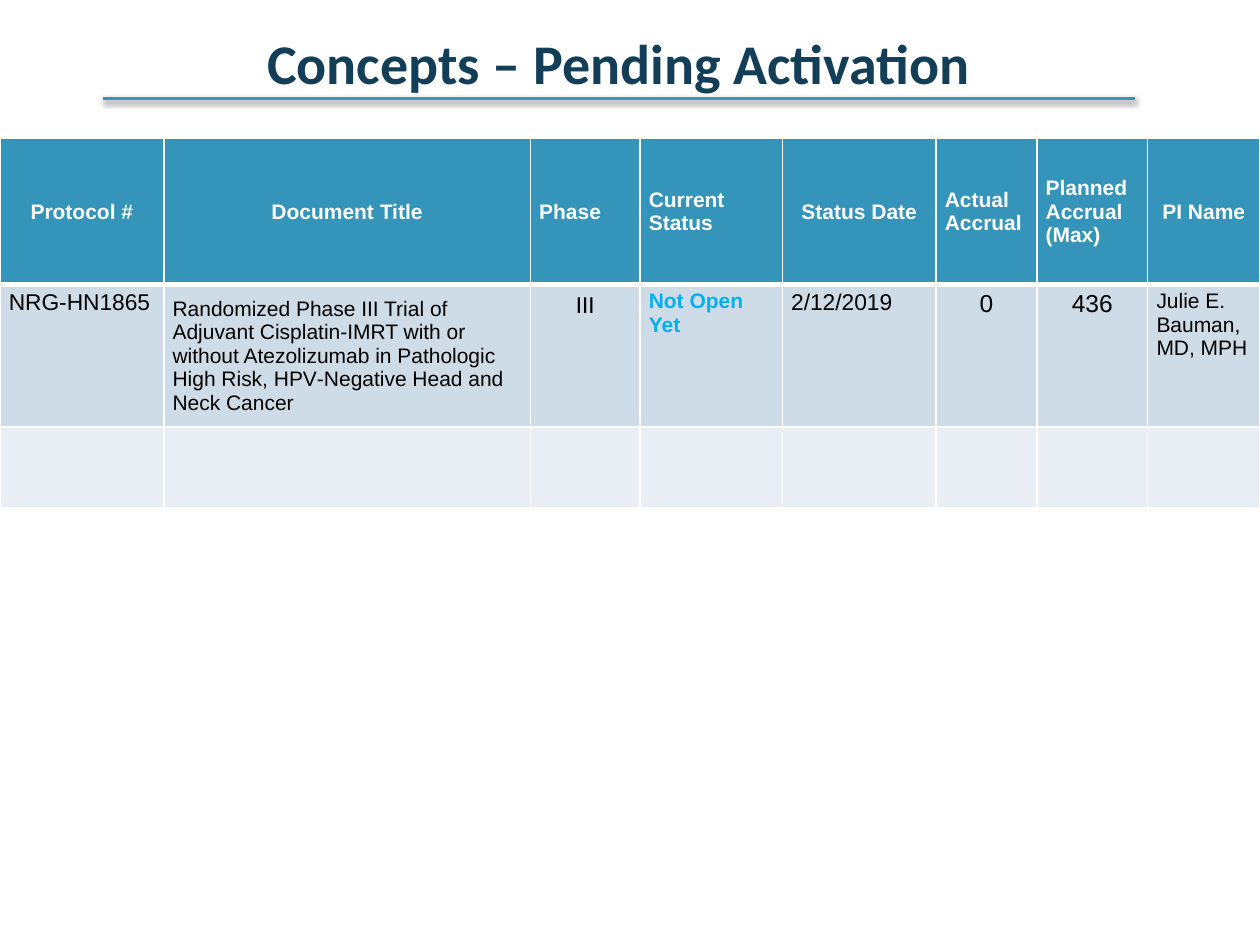
from dataclasses import dataclass

from lxml.etree import SubElement as Sub
from pptx import Presentation
from pptx.dml.color import RGBColor as Rgb
from pptx.enum.shapes import MSO_CONNECTOR as Conn
from pptx.enum.text import MSO_ANCHOR as Anchor, MSO_AUTO_SIZE as Fit, PP_ALIGN as Align
from pptx.oxml import parse_xml
from pptx.oxml.ns import nsdecls, qn
from pptx.util import Inches, Pt


@dataclass(frozen=True)
class Theme:
    navy: str = "123E57"
    teal: str = "3494BA"
    sky: str = "00B0F0"
    black: str = "000000"
    white: str = "FFFFFF"
    band: str = "CEDCE7"
    pale: str = "E8EEF3"
    sans: str = "Arial"
    head: str = "Calibri"
    title: int = 32
    small: int = 12
    mid: int = 13
    big: int = 14


T = Theme()
LEFT, MID = Align.LEFT, Align.CENTER
COLS = [1.3, 2.91, 0.87, 1.13, 1.22, 0.8, 0.88, 0.89]
ROWS = [1.16, 1.13, 0.64]
HEADS = [
    ("Protocol #", MID),
    ("Document Title", MID),
    ("Phase", LEFT),
    ("Current Status", LEFT),
    ("Status Date", MID),
    ("Actual Accrual", LEFT),
    ("Planned Accrual (Max)", LEFT),
    ("PI Name", MID),
]
TRIAL = [
    ("NRG-HN1865", dict(size=T.mid)),
    ("Randomized Phase III Trial of Adjuvant Cisplatin‐IMRT with or without "
     "Atezolizumab in Pathologic High Risk, HPV‐Negative Head and Neck Cancer",
     dict(anchor=Anchor.MIDDLE)),
    ("III", dict(size=T.big, face=T.head, align=MID)),
    ("Not Open Yet", dict(color=T.sky, bold=True)),
    ("2/12/2019", dict(size=T.mid)),
    ("0", dict(size=T.big, align=MID)),
    ("436", dict(size=T.big, align=MID)),
    ("Julie E. Bauman, MD, MPH", {}),
]


def write(frame, text, size=T.small, face=T.sans, color=T.black, bold=False, align=LEFT):
    frame.text = text
    para = frame.paragraphs[0]
    para.alignment = align
    font = para.font
    font.size, font.name, font.bold = Pt(size), face, bold
    font.color.rgb = Rgb.from_string(color)


def add_title(slide, text):
    title = slide.shapes.title
    title.left, title.top = Inches(0.39), Inches(0.22)
    title.width, title.height = Inches(9.04), Inches(0.55)
    frame = title.text_frame
    frame.margin_left = frame.margin_right = 0
    frame.margin_top = frame.margin_bottom = 0
    frame.auto_size = Fit.NONE
    frame.vertical_anchor = Anchor.MIDDLE
    write(frame, text, T.title, T.head, T.navy, True, MID)


def edge(cell, base=1, top=1):
    """Draw white borders, with widths in points for the base and top sides."""
    props = cell._tc.get_or_add_tcPr()
    for side, width in dict(L=1, R=1, T=top, B=base).items():
        line = Sub(props, qn(f"a:ln{side}"), w=str(Pt(width)))
        fill = Sub(line, qn("a:solidFill"))
        Sub(fill, qn("a:srgbClr"), val=T.white)


def style(cell, color, base=1, top=1):
    edge(cell, base, top)
    cell.fill.solid()
    cell.fill.fore_color.rgb = Rgb.from_string(color)
    cell.margin_left = cell.margin_right = Inches(0.07)
    cell.margin_top = cell.margin_bottom = Inches(0.04)


def fill_cell(cell, text, anchor=Anchor.TOP, **look):
    cell.vertical_anchor = anchor
    write(cell.text_frame, text, **look)


def add_grid(slide):
    grid = slide.shapes.add_table(
        len(ROWS), len(COLS), 0, Inches(1.1), Inches(sum(COLS)), Inches(sum(ROWS))
    ).table
    for col, width in zip(grid.columns, COLS):
        col.width = Inches(width)
    for row, height in zip(grid.rows, ROWS):
        row.height = Inches(height)
    top, body, last = (row.cells for row in grid.rows)
    for cell, (text, align) in zip(top, HEADS):
        style(cell, T.teal, base=3)
        fill_cell(cell, text, Anchor.MIDDLE, color=T.white, bold=True, align=align)
    for cell, (text, look) in zip(body, TRIAL):
        style(cell, T.band, top=3)
        fill_cell(cell, text, **look)
    for cell in last:
        style(cell, T.pale)


def add_rule(slide):
    y = Inches(0.78)
    rule = slide.shapes.add_connector(Conn.STRAIGHT, Inches(0.82), y, Inches(9.01), y)
    rule.line.color.rgb = Rgb.from_string(T.teal)
    rule.line.width = Pt(2)
    rule._element.spPr.append(parse_xml(
        f'<a:effectLst {nsdecls("a")}>'
        f'<a:outerShdw blurRad="{Pt(3.1)}" dist="{Pt(1.6)}" dir="5400000" rotWithShape="0">'
        f'<a:srgbClr val="{T.black}"><a:alpha val="38000"/></a:srgbClr>'
        '</a:outerShdw></a:effectLst>'
    ))


def main():
    deck = Presentation()
    deck.slide_width, deck.slide_height = Inches(10), Inches(7.5)
    slide = deck.slides.add_slide(deck.slide_layouts[5])
    add_title(slide, "Concepts – Pending Activation")
    add_grid(slide)
    add_rule(slide)
    deck.save("out.pptx")


if __name__ == "__main__":
    main()
